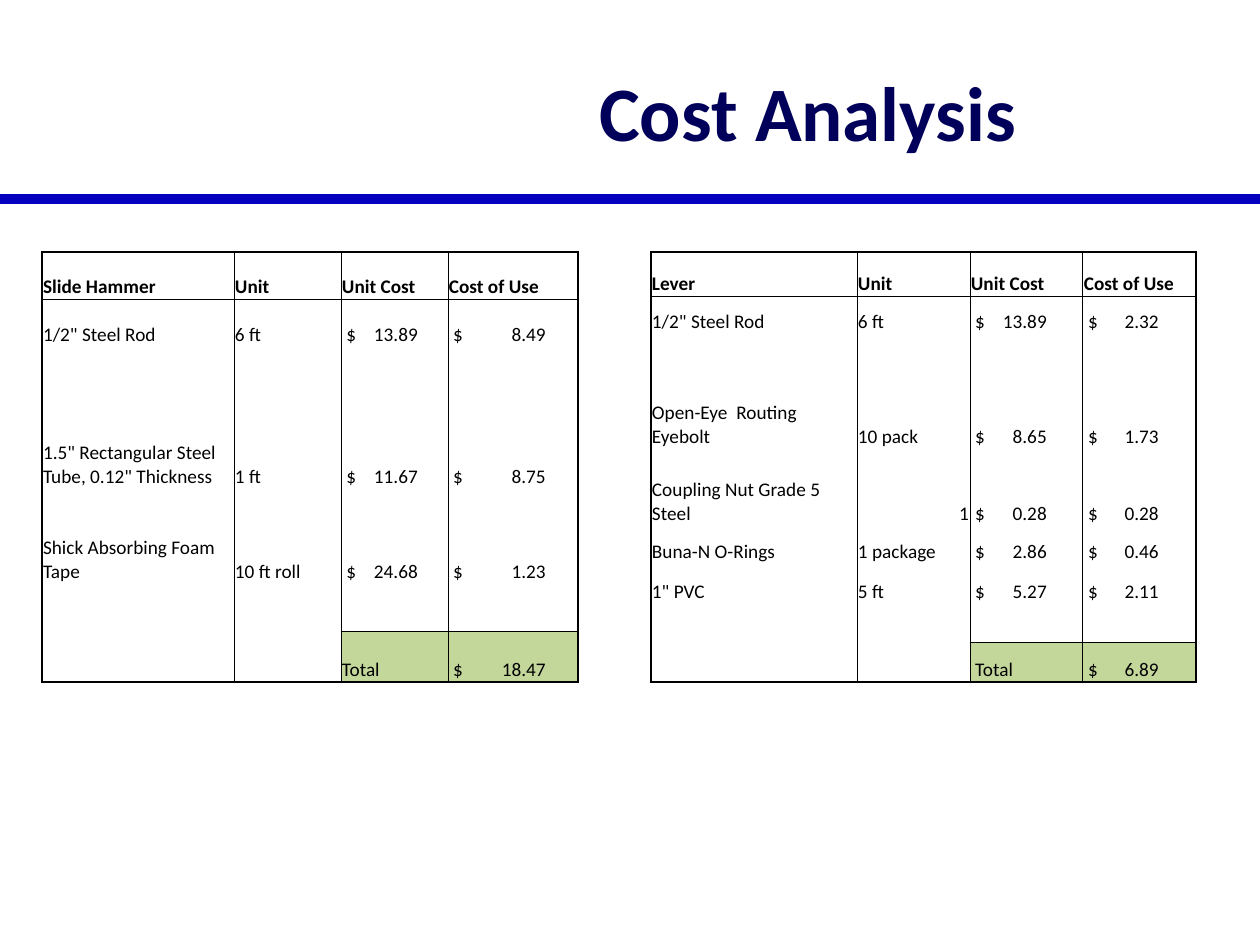
"""Build the cost analysis slide with its two cost tables."""
from lxml.etree import SubElement
from pptx import Presentation
from pptx.dml.color import RGBColor
from pptx.enum.shapes import MSO_CONNECTOR
from pptx.enum.text import MSO_ANCHOR, PP_ALIGN
from pptx.oxml.ns import qn
from pptx.util import Pt

PX = 914400 // 126
FONT = "Calibri"
COLORS = {"title": "00005A", "rule": "0300BE", "ink": "000000", "total": "C4D79B"}

TABLES = [
    {
        "left": 42,
        "cols": [192, 107, 107, 130],
        "rows": [47, 48, 142, 95, 48, 50],
        "tabs": {2: 76, 3: 97},
        "cells": [
            ["Slide Hammer", "Unit", "Unit Cost", "Cost of Use"],
            ['1/2" Steel Rod', "6 ft", " $\t13.89", " $\t8.49"],
            ['1.5" Rectangular Steel Tube, 0.12" Thickness', "1 ft", " $\t11.67", " $\t8.75"],
            ["Shick Absorbing Foam Tape", "10 ft roll", " $\t24.68", " $\t1.23"],
            ["", "", "", ""],
            ["", "", "Total", " $\t18.47"],
        ],
    },
    {
        "left": 651,
        "cols": [206, 113, 113, 113],
        "rows": [44, 38, 115, 77, 38, 40, 38, 40],
        "tabs": {2: 76, 3: 75},
        "cells": [
            ["Lever", "Unit", "Unit Cost", "Cost of Use"],
            ['1/2" Steel Rod', "6 ft", " $\t13.89", " $\t2.32"],
            ["Open-Eye  Routing Eyebolt", "10 pack", " $\t8.65", " $\t1.73"],
            ["Coupling Nut Grade 5 Steel", "1", " $\t0.28", " $\t0.28"],
            ["Buna-N O-Rings", "1 package", " $\t2.86", " $\t0.46"],
            ['1" PVC', "5 ft", " $\t5.27", " $\t2.11"],
            ["", "", "", ""],
            ["", "", " Total", " $\t6.89"],
        ],
    },
]


def style(run, size, color, bold):
    run.font.name = FONT
    run.font.size = Pt(size)
    run.font.bold = bold
    run.font.color.rgb = RGBColor.from_string(COLORS[color])


def border(cell, side, width):
    line = SubElement(cell._tc.get_or_add_tcPr(), qn(f"a:ln{side}"), w=str(Pt(width)))
    if width:
        fill = SubElement(line, qn("a:solidFill"))
        SubElement(fill, qn("a:srgbClr"), val=COLORS["ink"])
    else:
        SubElement(line, qn("a:noFill"))


deck = Presentation()
deck.slide_width = 1260 * PX
deck.slide_height = 945 * PX
slide = deck.slides.add_slide(deck.slide_layouts[5])

rule = slide.shapes.add_connector(MSO_CONNECTOR.STRAIGHT, 0, 199 * PX, 1260 * PX, 199 * PX)
rule.line.width = Pt(6)
rule.line.color.rgb = RGBColor.from_string(COLORS["rule"])
SubElement(rule._element.spPr, qn("a:effectLst"))

title = slide.shapes.title
title.left, title.top, title.width, title.height = 388 * PX, 32 * PX, 840 * PX, 158 * PX
title.text_frame.text = "Cost Analysis"
title.text_frame.vertical_anchor = MSO_ANCHOR.MIDDLE
head = title.text_frame.paragraphs[0]
head.alignment = PP_ALIGN.CENTER
style(head.runs[0], 44, "title", True)

for data in TABLES:
    cols, rows = data["cols"], data["rows"]
    end, last = len(cols) - 1, len(rows) - 1
    table = slide.shapes.add_table(
        len(rows), len(cols), data["left"] * PX, 252 * PX, sum(cols) * PX, sum(rows) * PX
    ).table
    table.first_row = table.horz_banding = False
    for col, width in zip(table.columns, cols):
        col.width = width * PX
    for row, height in zip(table.rows, rows):
        row.height = height * PX

    for r, texts in enumerate(data["cells"]):
        for c, text in enumerate(texts):
            cell = table.cell(r, c)
            total = r == last and c >= 2
            border(cell, "L", 1 if c == 0 else 0.5)
            border(cell, "R", 1 if c == end else 0.5)
            border(cell, "T", 1 if r == 0 else 0.5 if r == 1 or total else 0)
            low = r == 0 or (r == last - 1 and c >= 2)
            border(cell, "B", 1 if r == last else 0.5 if low else 0)
            if total:
                cell.fill.solid()
                cell.fill.fore_color.rgb = RGBColor.from_string(COLORS["total"])
            else:
                cell.fill.background()
            cell.vertical_anchor = MSO_ANCHOR.BOTTOM
            cell.margin_left = cell.margin_right = cell.margin_top = PX
            cell.margin_bottom = 0
            cell.text_frame.text = text
            para = cell.text_frame.paragraphs[0]
            if text == "1":
                para.alignment = PP_ALIGN.RIGHT
            if "\t" in text:
                stops = SubElement(para._p.get_or_add_pPr(), qn("a:tabLst"))
                SubElement(stops, qn("a:tab"), pos=str(data["tabs"][c] * PX), algn="r")
            if not text:
                SubElement(para._p, qn("a:endParaRPr"), sz="1100")
            for run in para.runs:
                style(run, 11, "ink", r == 0)

deck.save("out.pptx")
